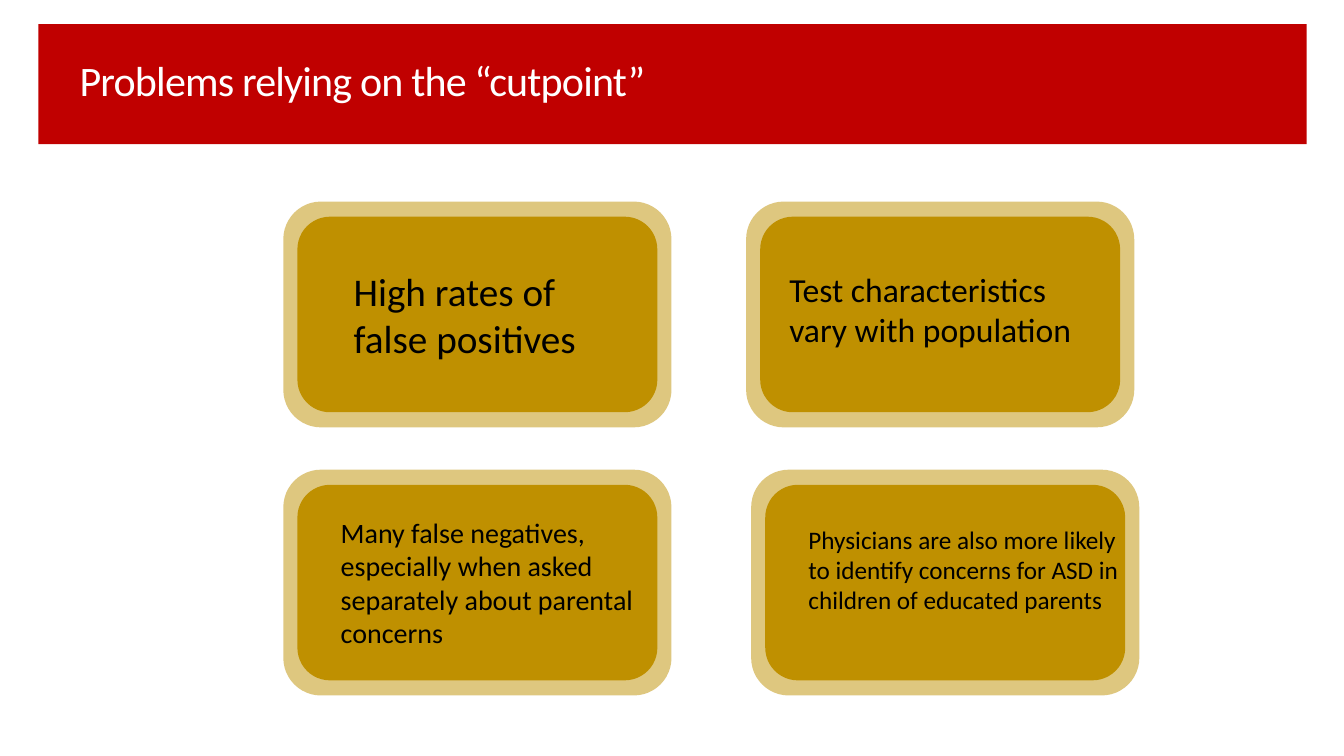
"""Build the slide on problems with relying on a screening cutpoint."""
from dataclasses import dataclass

import lxml.etree
import pptx
import pptx.dml.color
import pptx.enum.shapes
import pptx.enum.text
import pptx.oxml.ns
import pptx.util

Inches = pptx.util.Inches
SHAPES = pptx.enum.shapes.MSO_SHAPE
RED, GOLD, BLACK, WHITE = "C00000", "BF9000", "000000", "FFFFFF"
CARD_W, CARD_H, INSET_X, INSET_Y = 3.85, 2.24, 0.14, 0.15
TOP_ROW, BOTTOM_ROW = 2.0, 4.66


@dataclass
class Card:
    """A framed card, with its text box offset from the card's corner."""
    text: str
    left: float
    top: float
    dx: float
    dy: float
    width: float
    height: float
    size: int


CARDS = [
    Card("High rates of false positives",
         2.81, TOP_ROW, 0.6, 0.6, 2.66, 1.35, 28),
    Card("Many false negatives, especially when asked separately about parental concerns",
         2.81, BOTTOM_ROW, 0.47, 0.4, 3.11, 1.75, 20),
    Card("Test characteristics vary with population",
         7.4, TOP_ROW, 0.33, 0.62, 3.3, 1.21, 24),
    Card("Physicians are also more likely to identify concerns for ASD in "
         "children of educated parents",
         7.45, BOTTOM_ROW, 0.47, 0.49, 3.3, 1.62, 18),
]


def rgb(value: str) -> pptx.dml.color.RGBColor:
    """Turn a hex string into a colour."""
    return pptx.dml.color.RGBColor.from_string(value)


def add_box(shapes, kind, left: float, top: float, width: float, height: float,
            color: str, alpha: int = 100):
    """Add a filled shape without outline or shadow."""
    sp = shapes.add_shape(kind, Inches(left), Inches(top), Inches(width), Inches(height))
    sp.shadow.inherit = False
    sp.fill.solid()
    sp.fill.fore_color.rgb = rgb(color)
    sp.line.fill.background()
    if alpha < 100:
        clr = sp.element.spPr.find(".//" + pptx.oxml.ns.qn("a:srgbClr"))
        lxml.etree.SubElement(clr, pptx.oxml.ns.qn("a:alpha"), val=str(alpha * 1000))
    return sp


def set_text(sp, text: str, *, size: int, color: str, line_spacing: float = 1.0,
             tracking: float = 0, anchor=pptx.enum.text.MSO_ANCHOR.TOP,
             fit=pptx.enum.text.MSO_AUTO_SIZE.NONE) -> None:
    """Write one left-aligned formatted paragraph into a shape."""
    tf = sp.text_frame
    tf.word_wrap = True
    tf.auto_size = fit
    tf.vertical_anchor = anchor
    p = tf.paragraphs[0]
    p.alignment = pptx.enum.text.PP_ALIGN.LEFT
    p.line_spacing = line_spacing
    r = p.add_run()
    r.text = text
    r.font.name = "Calibri"
    r.font.size = pptx.util.Pt(size)
    r.font.color.rgb = rgb(color)
    if tracking:
        r.font.element.set("spc", str(round(tracking * 100))) if hasattr(
            r.font, "element") else p.runs[0]._r.get_or_add_rPr().set(
            "spc", str(round(tracking * 100)))


def add_card(s, card: Card) -> None:
    """Draw a card as a group of frame, panel and text."""
    shapes = s.shapes.add_group_shape().shapes
    add_box(shapes, SHAPES.ROUNDED_RECTANGLE, card.left, card.top,
            CARD_W, CARD_H, GOLD, alpha=50)
    add_box(shapes, SHAPES.ROUNDED_RECTANGLE, card.left + INSET_X, card.top + INSET_Y,
            CARD_W - 2 * INSET_X, CARD_H - 2 * INSET_Y, GOLD)
    sp = shapes.add_textbox(Inches(card.left + card.dx), Inches(card.top + card.dy),
                            Inches(card.width), Inches(card.height))
    set_text(sp, card.text, size=card.size, color=BLACK,
             fit=pptx.enum.text.MSO_AUTO_SIZE.SHAPE_TO_FIT_TEXT)


def main() -> None:
    """Build and save the slide."""
    prs = pptx.Presentation()
    prs.slide_width, prs.slide_height = Inches(13.33), Inches(7.5)
    s = prs.slides.add_slide(prs.slide_layouts[5])

    banner = add_box(s.shapes, SHAPES.RECTANGLE, 0.38, 0.24, 12.58, 1.19, RED)
    title = s.shapes.title
    title.element.addprevious(banner.element)
    title.left, title.top = Inches(0.69), Inches(0.33)
    title.width, title.height = Inches(11.54), Inches(0.99)
    set_text(title, "Problems relying on the “cutpoint”", size=30, color=WHITE,
             line_spacing=0.9, tracking=-0.6, anchor=pptx.enum.text.MSO_ANCHOR.MIDDLE)

    for card in CARDS:
        add_card(s, card)
    prs.save("out.pptx")


if __name__ == "__main__":
    main()
